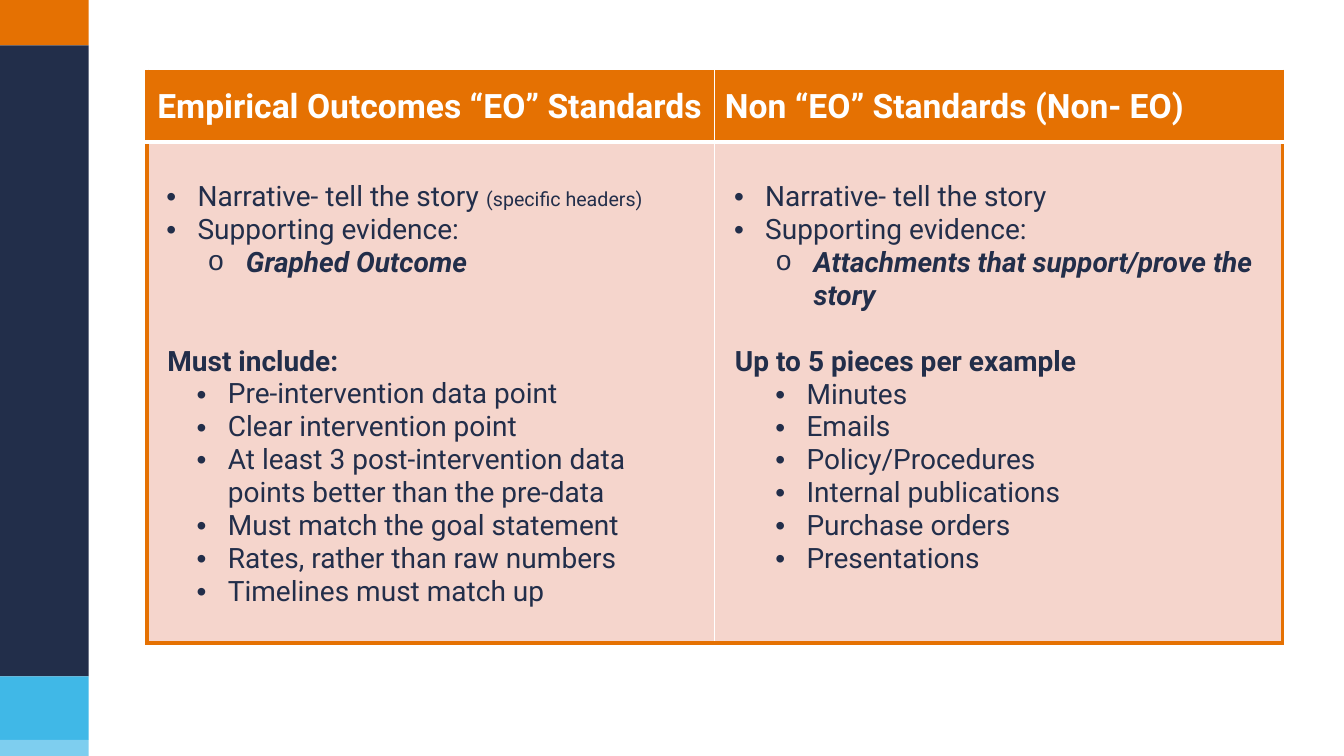
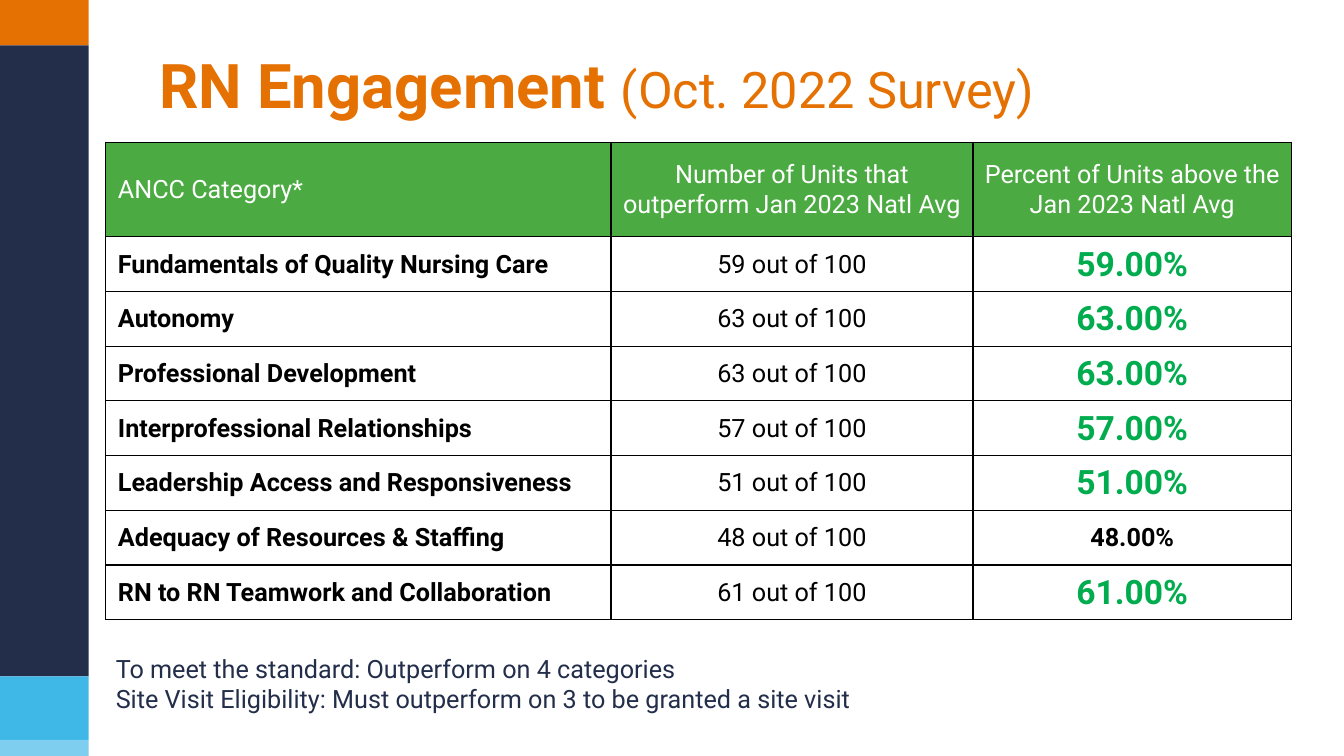
import dataclasses

import lxml.etree
import pptx
import pptx.dml.color
import pptx.enum.shapes
import pptx.enum.text
import pptx.oxml.ns
import pptx.util

EMU_PER_PX = 9144  # 100 px to the inch
ALIGN = pptx.enum.text.PP_ALIGN
ANCHOR = pptx.enum.text.MSO_ANCHOR


@dataclasses.dataclass(frozen=True)
class Theme:
    font: str = "Roboto"
    orange: str = "E57102"
    navy: str = "222E4A"
    sky: str = "40B8E7"
    pale_sky: str = "7ECEEF"
    blush: str = "F5D5CC"
    leaf: str = "4BAA42"
    green: str = "00AC4E"
    white: str = "FFFFFF"
    black: str = "000000"
    title_size: int = 44
    subtitle_size: int = 36
    heading_size: int = 24
    body_size: int = 20
    text_size: int = 18
    small_size: int = 14


THEME = Theme()


def px(length):
    return pptx.util.Emu(round(length * EMU_PER_PX))


def rgb(color):
    return pptx.dml.color.RGBColor.from_string(color)


def add_element(parent, tag, **attributes):
    return lxml.etree.SubElement(parent, pptx.oxml.ns.qn(tag), attributes)


def write(frame, text, size=THEME.text_size, color=THEME.navy, bold=False, italic=False,
          align=ALIGN.LEFT, level=0, left=0, hang=0, bullet=None, before=0,
          line_spacing=None, same_paragraph=False):
    """Add text to a frame, as a new paragraph unless it continues the last one."""
    para = frame.paragraphs[-1]
    if not same_paragraph:
        if para.runs:
            para = frame.add_paragraph()
        para.alignment, para.level = align, level
        properties = para._p.get_or_add_pPr()
        properties.set("marL", str(px(left)))
        properties.set("indent", str(px(-hang)))
        if bullet:
            add_element(properties, "a:buFont", typeface="Courier New" if bullet == "o" else "Arial")
            add_element(properties, "a:buChar", char=bullet)
        if before:
            para.space_before = pptx.util.Pt(before)
        if line_spacing:
            para.line_spacing = line_spacing
    span = para.add_run()
    span.text = text
    span.font.name = THEME.font
    span.font.size = pptx.util.Pt(size)
    span.font.bold, span.font.italic = bold, italic
    span.font.color.rgb = rgb(color)


class SlideBuilder:
    """Holds the deck, its theme and the current slide."""

    def __init__(self, theme):
        self.theme = theme
        self.deck = pptx.Presentation()
        self.deck.slide_width, self.deck.slide_height = px(1333), px(750)
        self.page = None

    def new_page(self):
        self.page = self.deck.slides.add_slide(self.deck.slide_layouts[6])
        # Side band
        band_edges = (0, 45, 671, 734, 750)
        band_colors = (self.theme.orange, self.theme.navy, self.theme.sky, self.theme.pale_sky)
        for top, bottom, color in zip(band_edges, band_edges[1:], band_colors):
            self.rectangle(0, top, 88, bottom - top, color)

    def rectangle(self, left, top, width, height, color):
        shape = self.page.shapes.add_shape(
            pptx.enum.shapes.MSO_SHAPE.RECTANGLE, px(left), px(top), px(width), px(height))
        shape.shadow.inherit = False
        shape.fill.solid()
        shape.fill.fore_color.rgb = rgb(color)
        shape.line.fill.background()

    def text_box(self, left, top, width, height, anchor=ANCHOR.TOP):
        box = self.page.shapes.add_textbox(px(left), px(top), px(width), px(height))
        frame = box.text_frame
        frame.word_wrap = True
        frame.vertical_anchor = anchor
        return frame

    def title(self, text, detail):
        frame = self.text_box(148, 46, 1117, 83, ANCHOR.MIDDLE)
        write(frame, text, size=self.theme.title_size, color=self.theme.orange, bold=True,
              line_spacing=0.9)
        write(frame, detail, size=self.theme.subtitle_size, color=self.theme.orange,
              same_paragraph=True)

    def table(self, left, top, widths, heights):
        table = self.page.shapes.add_table(
            len(heights), len(widths), px(left), px(top), px(sum(widths)), px(sum(heights))).table
        table.horz_banding = False
        for column, width in zip(table.columns, widths):
            column.width = px(width)
        for row, height in zip(table.rows, heights):
            row.height = px(height)
        return table

    def cell(self, cell, fill, borders, insets, anchor=ANCHOR.MIDDLE):
        """Style a cell; borders and insets run left, right, top, bottom."""
        properties = cell._tc.get_or_add_tcPr()
        for side, (color, points) in zip("LRTB", borders):
            line = add_element(properties, f"a:ln{side}", w=str(pptx.util.Pt(points)))
            add_element(add_element(line, "a:solidFill"), "a:srgbClr", val=color)
        cell.fill.solid()
        cell.fill.fore_color.rgb = rgb(fill)
        cell.vertical_anchor = anchor
        cell.margin_left, cell.margin_right, cell.margin_top, cell.margin_bottom = map(px, insets)
        return cell.text_frame


def build_standards(builder):
    theme = builder.theme
    builder.new_page()
    # heading, note, evidence, gap, lead-in, list indent, list
    columns = [
        ("Empirical Outcomes “EO” Standards", "(specific headers)", "Graphed Outcome",
         47, "Must include:", 70,
         ["Pre-intervention data point", "Clear intervention point",
          "At least 3 post-intervention data points better than the pre-data",
          "Must match the goal statement", "Rates, rather than raw numbers",
          "Timelines must match up"]),
        ("Non “EO” Standards (Non- EO)", None, "Attachments that support/prove the story",
         23.5, "Up to 5 pieces per example", 81,
         ["Minutes", "Emails", "Policy/Procedures", "Internal publications",
          "Purchase orders", "Presentations"]),
    ]
    table = builder.table(146, 71, [563, 563], [70, 497])
    edge, divider, rule = (theme.orange, 3), (theme.white, 1), (theme.white, 3)
    body = {"size": theme.body_size}
    bulleted = {**body, "bullet": "•", "hang": 31}

    for index, (heading, note, evidence, gap, lead, indent, items) in enumerate(columns):
        sides = (edge, divider) if index == 0 else (divider, edge)
        # Header
        frame = builder.cell(table.cell(0, index), theme.orange, (*sides, edge, rule),
                             (10, 10, 5, 5))
        write(frame, heading, size=theme.heading_size, color=theme.white, bold=True)
        # Narrative and evidence
        frame = builder.cell(table.cell(1, index), theme.blush, (*sides, rule, edge),
                             (10, 10, 38, 5), ANCHOR.TOP)
        write(frame, "Narrative- tell the story" + (" " if note else ""), left=40, **bulleted)
        if note:
            write(frame, note, size=theme.small_size, same_paragraph=True)
        write(frame, "Supporting evidence:", left=40, **bulleted)
        write(frame, evidence, bold=True, italic=True, level=1, left=88, hang=38, bullet="o", **body)
        # Requirements
        write(frame, lead, bold=True, left=10, before=gap, **body)
        for item in items:
            write(frame, item, level=1, left=indent, **bulleted)


def build_engagement(builder):
    theme = builder.theme
    builder.new_page()
    builder.title("RN Engagement ", "(Oct. 2022 Survey)")

    headings = ["ANCC Category*", "Number of Units that outperform Jan 2023 Natl Avg",
                "Percent of Units above the Jan 2023 Natl Avg"]
    scores = {
        "Fundamentals of Quality Nursing Care": 59,
        "Autonomy": 63,
        "Professional Development": 63,
        "Interprofessional Relationships": 57,
        "Leadership Access and Responsiveness": 51,
        "Adequacy of Resources & Staffing": 48,
        "RN to RN Teamwork and Collaboration": 61,
    }
    header_height, total_height = 94, 474
    row_height = (total_height - header_height) / len(scores)
    table = builder.table(105, 141, [501, 359, 316], [header_height] + [row_height] * len(scores))
    grid = [(theme.black, 1)] * 4

    def fill_row(row, fill, texts, formats):
        for column, (text, style) in enumerate(zip(texts, formats)):
            frame = builder.cell(table.cell(row, column), fill, grid,
                                 (1 if column else 12, 1, 1, 0))
            write(frame, text, align=ALIGN.CENTER if column else ALIGN.LEFT, **style)

    # Header row
    fill_row(0, theme.leaf, headings, [{"color": theme.white}] * 3)
    # Score rows, with majorities picked out
    plain = {"color": theme.black}
    strong = {"color": theme.black, "bold": True}
    passing = {"color": theme.green, "bold": True, "size": theme.heading_size}
    for row, (category, score) in enumerate(scores.items(), start=1):
        fill_row(row, theme.white, [category, f"{score} out of 100", f"{score:.2f}%"],
                 [strong, plain, passing if score > 50 else strong])

    # Notes under the table
    frame = builder.text_box(105, 643, 947, 71)
    write(frame, "To meet the standard: Outperform on 4 categories")
    write(frame, "Site Visit Eligibility: Must outperform on 3 to be granted a site visit")


def main():
    builder = SlideBuilder(THEME)
    build_standards(builder)
    build_engagement(builder)
    builder.deck.save("out.pptx")


if __name__ == "__main__":
    main()
